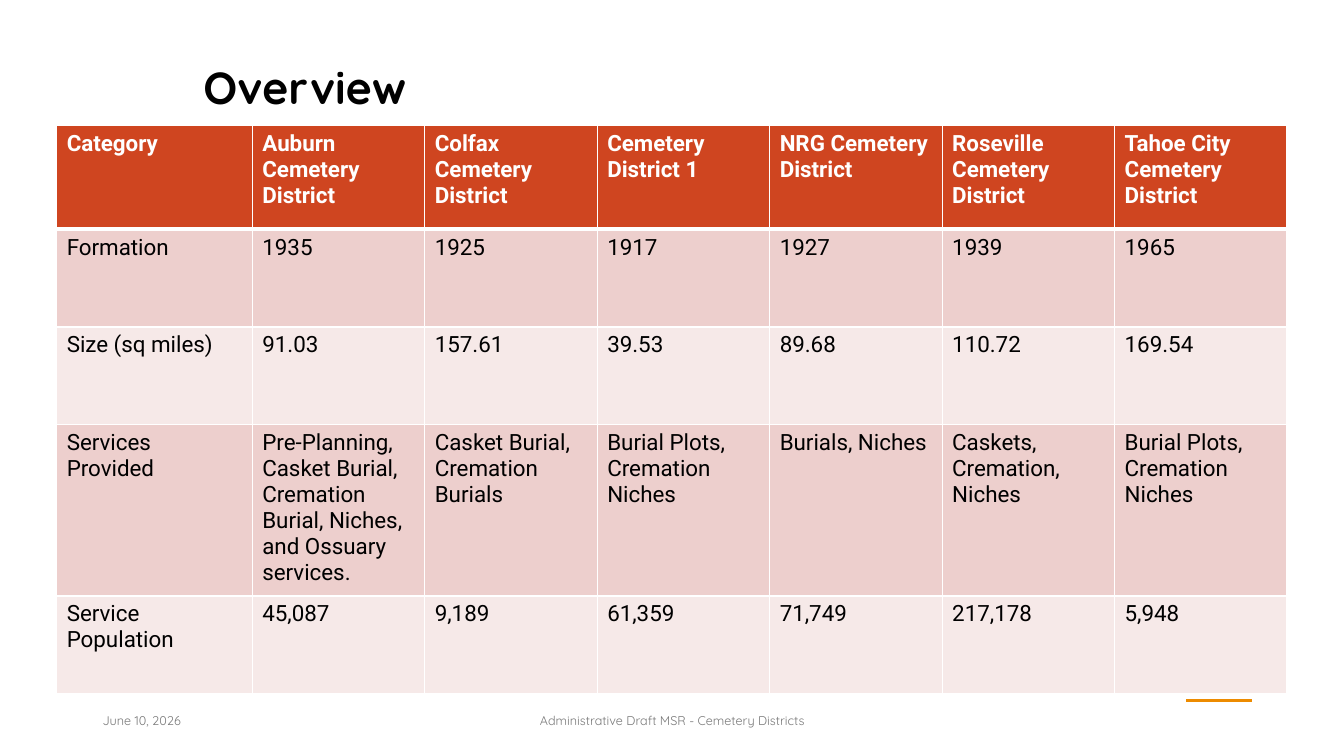
from dataclasses import dataclass

from lxml import etree
from pptx import Presentation
from pptx import util as u
from pptx.dml.color import RGBColor
from pptx.enum import shapes, text
from pptx.oxml import ns

COLORS = {
    "black": "000000",
    "white": "FFFFFF",
    "gray": "797979",
    "header": "CF4520",
    "band_dark": "EDCFCD",
    "band_light": "F6E9E8",
    "accent": "ED8B00",
}


@dataclass
class Label:
    words: str
    left: float
    top: float
    width: float
    height: float
    size: float
    color: str
    bold: bool = False
    align: text.PP_ALIGN = text.PP_ALIGN.LEFT
    anchor: text.MSO_ANCHOR = text.MSO_ANCHOR.MIDDLE
    spacing: float = 1.0


LABELS = [
    Label("Overview", 138.2, 36.7, 196.6, 48.2, 32, "black", bold=True,
          anchor=text.MSO_ANCHOR.BOTTOM, spacing=0.9),
    Label("June 10, 2026", 66.2, 500.4, 216, 28.8, 9, "gray"),
    Label("Administrative Draft MSR - Cemetery Districts", 318.2, 500.4, 324, 28.8,
          9, "gray", align=text.PP_ALIGN.CENTER),
]

DISTRICT_ROWS = [
    ["Category", "Auburn Cemetery District", "Colfax Cemetery District",
     "Cemetery District 1", "NRG Cemetery District", "Roseville Cemetery District",
     "Tahoe City Cemetery District"],
    ["Formation", "1935", "1925", "1917", "1927", "1939", "1965"],
    ["Size (sq miles)", "91.03", "157.61", "39.53", "89.68", "110.72", "169.54"],
    ["Services Provided",
     "Pre-Planning, Casket Burial, Cremation Burial, Niches, and Ossuary services.",
     "Casket Burial, Cremation Burials", "Burial Plots, Cremation Niches",
     "Burials, Niches", "Caskets, Cremation, Niches",
     "Burial Plots, Cremation Niches"],
    ["Service Population", "45,087", "9,189", "61,359", "71,749", "217,178", "5,948"],
]
COLUMN_WIDTHS = [139.7] + [123.2] * 6
ROW_HEIGHTS = [74, 69.8, 69.8, 118.8, 69.8]


def rgb(name: str) -> RGBColor:
    return RGBColor.from_string(COLORS[name])


def format_font(font, color: str, **values) -> None:
    for name, value in values.items():
        setattr(font, name, value)
    font.color.rgb = rgb(color)


def add_label(slide, label: Label) -> None:
    box = slide.shapes.add_textbox(
        *(u.Pt(v) for v in (label.left, label.top, label.width, label.height)))
    frame = box.text_frame
    frame.word_wrap = True
    frame.vertical_anchor = label.anchor
    paragraph = frame.paragraphs[0]
    paragraph.text = label.words
    paragraph.alignment = label.align
    paragraph.line_spacing = label.spacing
    format_font(paragraph.runs[0].font, label.color, name="Quicksand",
                size=u.Pt(label.size), bold=label.bold)


def set_borders(cell, widths: dict[str, float]) -> None:
    properties = cell._tc.get_or_add_tcPr()
    for position, (side, width) in enumerate(widths.items()):
        border = etree.Element(ns.qn(f"a:ln{side}"), w=str(u.Pt(width)))
        fill = etree.SubElement(border, ns.qn("a:solidFill"))
        etree.SubElement(fill, ns.qn("a:srgbClr"), val=COLORS["white"])
        properties.insert(position, border)


def add_district_table(slide) -> None:
    frame = slide.shapes.add_table(
        len(DISTRICT_ROWS), len(COLUMN_WIDTHS), u.Pt(40.5), u.Pt(89.8),
        u.Pt(sum(COLUMN_WIDTHS)), u.Pt(sum(ROW_HEIGHTS)))
    table = frame.table
    for column, width in zip(table.columns, COLUMN_WIDTHS):
        column.width = u.Pt(width)
    for index, (row, height, entries) in enumerate(
            zip(table.rows, ROW_HEIGHTS, DISTRICT_ROWS)):
        row.height = u.Pt(height)
        header = index == 0
        band = "header" if header else "band_dark" if index % 2 else "band_light"
        borders = {"L": 1, "R": 1, "T": 3 if index == 1 else 1, "B": 3 if header else 1}
        for cell, entry in zip(row.cells, entries):
            cell.text = entry
            cell.fill.solid()
            cell.fill.fore_color.rgb = rgb(band)
            set_borders(cell, borders)
            format_font(cell.text_frame.paragraphs[0].runs[0].font,
                        "white" if header else "black",
                        name="Roboto", size=u.Pt(16), bold=header)


def add_accent_line(slide) -> None:
    line = slide.shapes.add_connector(
        shapes.MSO_CONNECTOR.STRAIGHT, u.Pt(894.2), u.Pt(500.4), u.Pt(847.4), u.Pt(500.4))
    line.line.color.rgb = rgb("accent")
    line.line.width = u.Pt(2.5)
    etree.SubElement(line._element.spPr, ns.qn("a:effectLst"))


def main() -> None:
    presentation = Presentation()
    presentation.slide_width = u.Pt(960)
    presentation.slide_height = u.Pt(540)
    slide = presentation.slides.add_slide(presentation.slide_layouts[6])

    # Footer accent, title and footer text
    add_accent_line(slide)
    for label in LABELS:
        add_label(slide, label)

    # Comparison of the cemetery districts
    add_district_table(slide)

    presentation.save("out.pptx")


if __name__ == "__main__":
    main()
